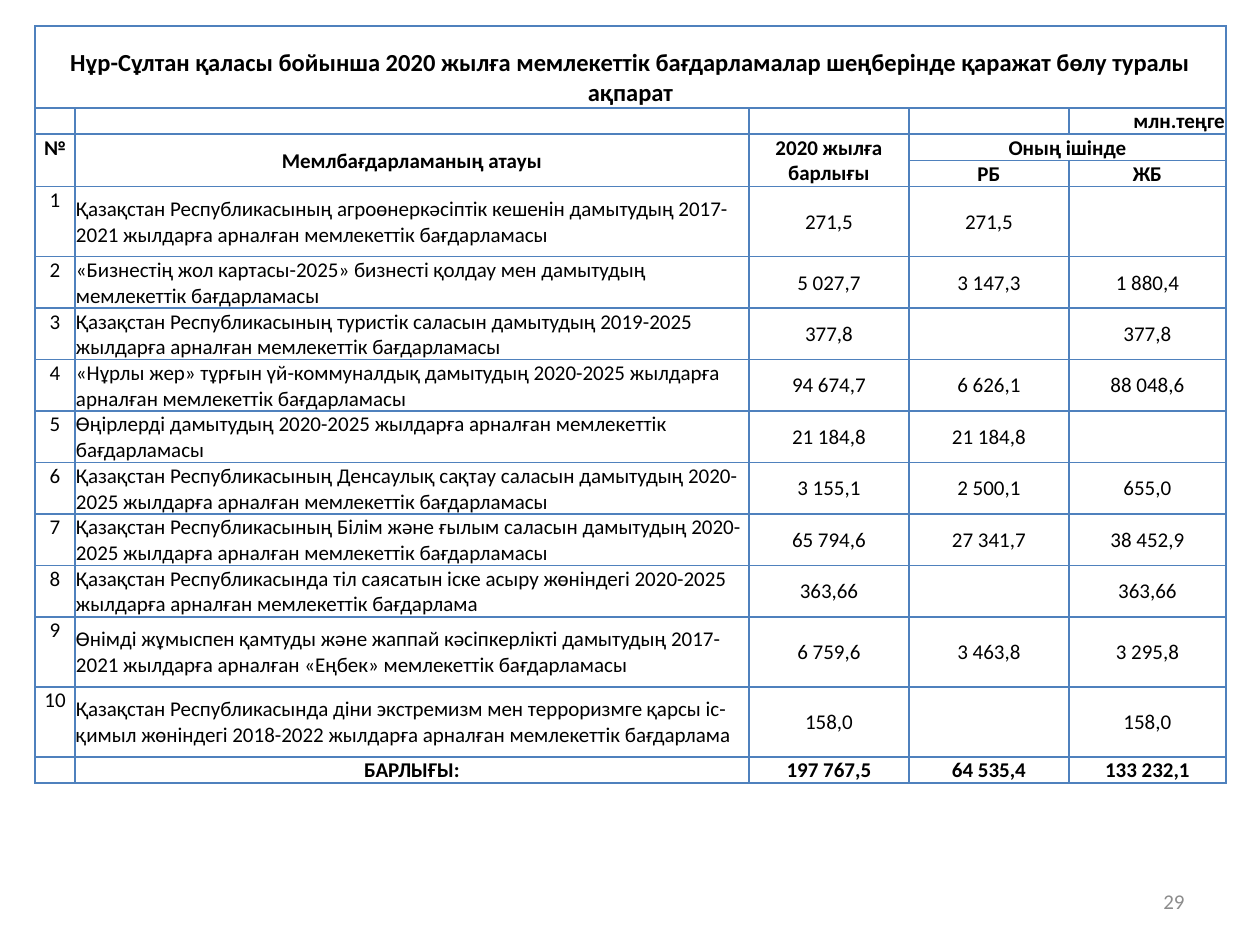
from lxml.etree import SubElement
from pptx import Presentation
from pptx.dml.color import RGBColor
from pptx.enum.text import MSO_ANCHOR, PP_ALIGN
from pptx.oxml.ns import qn
from pptx.util import Emu, Pt

EMU_PER_PX = 914400 / 126
COLORS = {"text": "000000", "border": "4F81BD", "page_number": "8C8C8C"}
FONT = "Calibri"
COLUMN_WIDTHS = [40, 674, 160, 160, 157]
HEADER_HEIGHTS = [82, 26, 26, 26]
PROGRAM_HEIGHTS = [70, 51, 51, 51, 51, 51, 51, 51, 70, 70]
TOTAL_HEIGHT = 26
TITLE = (
    "Нұр-Сұлтан қаласы бойынша 2020 жылға мемлекеттік бағдарламалар "
    "шеңберінде қаражат бөлу туралы ақпарат"
)
HEADERS = [
    [TITLE, "", "", "", ""],
    ["", "", "", "", "млн.теңге"],
    ["№", "Мемлбағдарламаның атауы", "2020 жылға барлығы", "Оның ішінде", ""],
    ["", "", "", "РБ", "ЖБ"],
]
MERGES = [(0, 0, 0, 4), (2, 0, 3, 0), (2, 1, 3, 1), (2, 2, 3, 2), (2, 3, 2, 4)]
PROGRAMS = [
    ("Қазақстан Республикасының агроөнеркәсіптік кешенін дамытудың 2017-2021 жылдарға арналған мемлекеттік бағдарламасы",
     "271,5", "271,5", ""),
    ("«Бизнестің жол картасы-2025» бизнесті қолдау мен дамытудың мемлекеттік бағдарламасы",
     "5 027,7", "3 147,3", "1 880,4"),
    ("Қазақстан Республикасының туристік саласын дамытудың 2019-2025 жылдарға арналған мемлекеттік бағдарламасы",
     "377,8", "", "377,8"),
    ("«Нұрлы жер» тұрғын үй-коммуналдық дамытудың 2020-2025 жылдарға арналған мемлекеттік бағдарламасы",
     "94 674,7", "6 626,1", "88 048,6"),
    ("Өңірлерді дамытудың 2020-2025 жылдарға арналған мемлекеттік бағдарламасы",
     "21 184,8", "21 184,8", ""),
    ("Қазақстан Республикасының Денсаулық сақтау саласын дамытудың 2020-2025 жылдарға арналған мемлекеттік бағдарламасы",
     "3 155,1", "2 500,1", "655,0"),
    ("Қазақстан Республикасының Білім және ғылым саласын дамытудың 2020-2025 жылдарға арналған мемлекеттік бағдарламасы",
     "65 794,6", "27 341,7", "38 452,9"),
    ("Қазақстан Республикасында тіл саясатын іске асыру жөніндегі 2020-2025 жылдарға арналған мемлекеттік бағдарлама",
     "363,66", "", "363,66"),
    ("Өнімді жұмыспен қамтуды және жаппай кәсіпкерлікті дамытудың 2017-2021 жылдарға арналған «Еңбек» мемлекеттік бағдарламасы",
     "6 759,6", "3 463,8", "3 295,8"),
    ("Қазақстан Республикасында діни экстремизм мен терроризмге қарсы іс-қимыл жөніндегі 2018-2022 жылдарға арналған мемлекеттік бағдарлама",
     "158,0", "", "158,0"),
]
TOTALS = ["", "БАРЛЫҒЫ:", "197 767,5", "64 535,4", "133 232,1"]


def px(length):
    """Turn pixels into EMU."""
    return Emu(round(length * EMU_PER_PX))


def write_text(text_frame, text, size=12, bold=False, color="text", align=PP_ALIGN.CENTER):
    """Write one formatted paragraph, keeping the size when it is empty."""
    paragraph = text_frame.paragraphs[0]
    paragraph.alignment = align
    if not text:
        SubElement(paragraph._p, qn("a:endParaRPr"), sz=str(size * 100))
        return
    run = paragraph.add_run()
    run.text = text
    run.font.name = FONT
    run.font.size = Pt(size)
    run.font.bold = bold
    run.font.color.rgb = RGBColor.from_string(COLORS[color])


def add_borders(cell):
    """Draw a thin line on all four sides of a cell."""
    properties = cell._tc.get_or_add_tcPr()
    for side in ("a:lnL", "a:lnR", "a:lnT", "a:lnB"):
        line = SubElement(properties, qn(side), w=str(Pt(1)))
        fill = SubElement(line, qn("a:solidFill"))
        SubElement(fill, qn("a:srgbClr"), val=COLORS["border"])


def fill_cell(cell, text, anchor=MSO_ANCHOR.MIDDLE, **text_format):
    """Set the borders, margins and text of a cell."""
    add_borders(cell)
    cell.fill.background()
    cell.margin_left = cell.margin_right = cell.margin_top = px(1)
    cell.margin_bottom = 0
    cell.vertical_anchor = anchor
    write_text(cell.text_frame, text, **text_format)


def cell_format(row, column, last_row):
    """Give the format of a cell from its place in the table."""
    is_program = len(HEADERS) <= row < last_row
    cell_style = {"bold": not is_program}
    if row in (0, 1, last_row) or (row, column) == (2, 3):
        cell_style["anchor"] = MSO_ANCHOR.BOTTOM
    elif column == 0:
        cell_style["anchor"] = MSO_ANCHOR.TOP
    if row == 0:
        cell_style["size"] = 14
    elif row == 1:
        cell_style["align"] = PP_ALIGN.RIGHT
    elif is_program and column == 1:
        cell_style["align"] = PP_ALIGN.LEFT
    return cell_style


def add_budget_table(slide):
    """Add the table of state programmes and their funding."""
    programs = [[str(number), *program] for number, program in enumerate(PROGRAMS, 1)]
    rows = HEADERS + programs + [TOTALS]
    heights = HEADER_HEIGHTS + PROGRAM_HEIGHTS + [TOTAL_HEIGHT]
    shape = slide.shapes.add_table(
        len(rows), len(COLUMN_WIDTHS), px(35), px(26), px(sum(COLUMN_WIDTHS)), px(sum(heights))
    )
    table = shape.table
    table.first_row = table.horz_banding = False
    for column, width in zip(table.columns, COLUMN_WIDTHS):
        column.width = px(width)
    for row, height in zip(table.rows, heights):
        row.height = px(height)
    for top, left, bottom, right in MERGES:
        table.cell(top, left).merge(table.cell(bottom, right))
    last_row = len(rows) - 1
    for row, texts in enumerate(rows):
        for column, text in enumerate(texts):
            fill_cell(table.cell(row, column), text, **cell_format(row, column, last_row))


def add_page_number(slide):
    """Add the page number at the lower right."""
    box = slide.shapes.add_textbox(px(903), px(876), px(294), px(50))
    box.text_frame.word_wrap = True
    box.text_frame.vertical_anchor = MSO_ANCHOR.MIDDLE
    write_text(box.text_frame, "29", color="page_number", align=PP_ALIGN.RIGHT)


def main():
    """Build and save the presentation."""
    presentation = Presentation()
    presentation.slide_width = px(1260)
    presentation.slide_height = px(945)
    slide = presentation.slides.add_slide(presentation.slide_layouts[6])
    add_page_number(slide)
    add_budget_table(slide)
    presentation.save("out.pptx")


if __name__ == "__main__":
    main()
